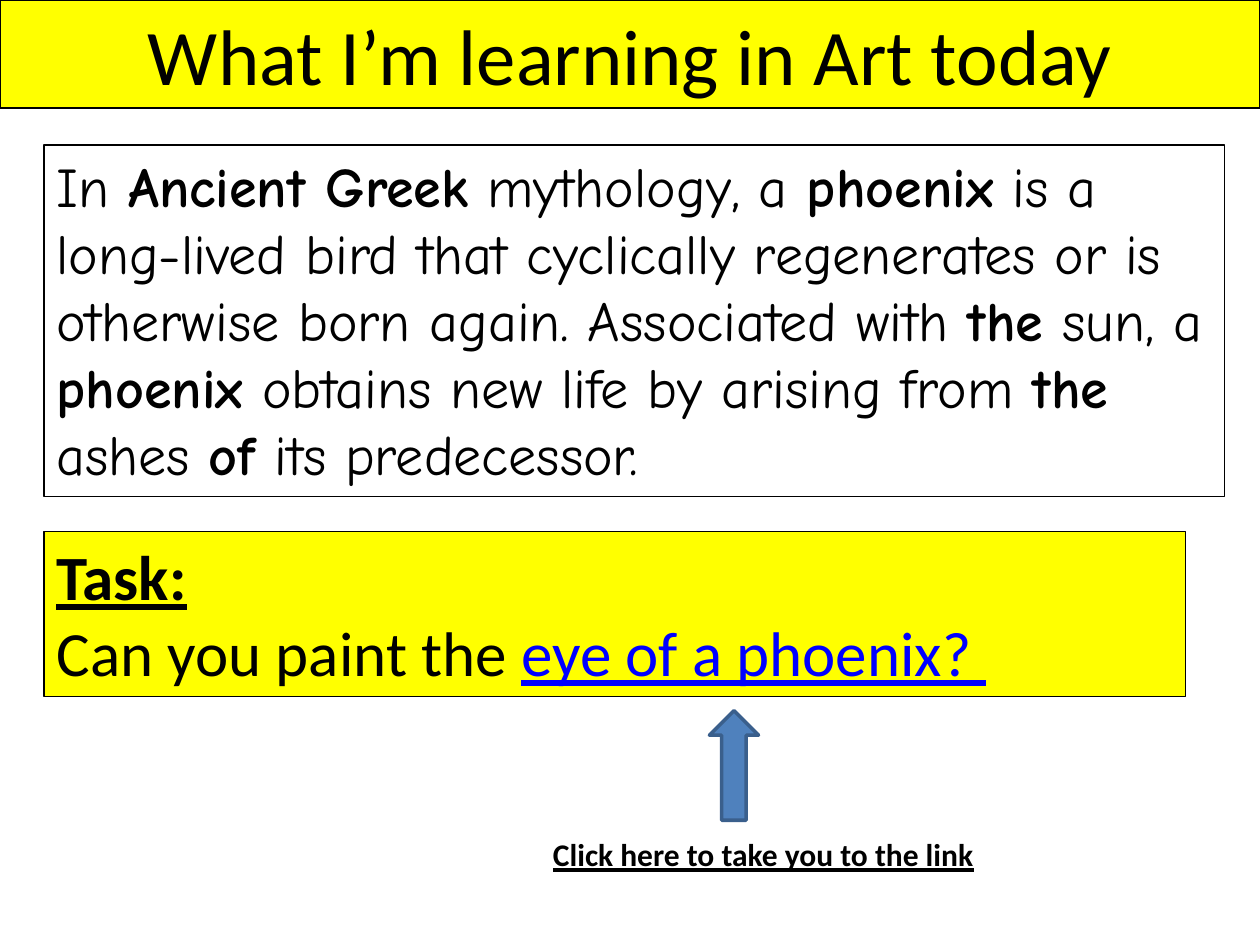
from pptx import Presentation
from pptx.dml.color import RGBColor
from pptx.enum.shapes import MSO_SHAPE
from pptx.enum.text import MSO_ANCHOR, MSO_AUTO_SIZE, PP_ALIGN
from pptx.util import Inches, Pt

BLACK = RGBColor(0x00, 0x00, 0x00)
YELLOW = RGBColor(0xFF, 0xFF, 0x00)
LINK_BLUE = RGBColor(0x00, 0x00, 0xFF)
ARROW_FILL = RGBColor(0x4F, 0x81, 0xBD)
ARROW_LINE = RGBColor(0x3A, 0x5F, 0x8C)

# Content: paragraphs of (text, format) runs
BOLD = {"bold": True}
HEADING = {"bold": True, "underline": True}
LINK = {"color": LINK_BLUE, "underline": True}

TITLE = [[("What I’m learning in Art today", {})]]
MYTH = [[
    ("In ", {}), ("Ancient Greek", BOLD), (" mythology, a ", {}),
    ("phoenix", BOLD),
    (" is a long-lived bird that cyclically regenerates or is otherwise "
     "born again. Associated with ", {}),
    ("the", BOLD), (" sun, a ", {}), ("phoenix", BOLD),
    (" obtains new life by arising from ", {}), ("the", BOLD),
    (" ashes ", {}), ("of", BOLD), (" its predecessor.", {}),
]]
TASK = [
    [("Task:", HEADING)],
    [("Can you paint the ", {}), ("eye of a phoenix? ", LINK)],
]
HINT = [[("Click here to take you to the link", HEADING)]]


def write(sp, paragraphs, size, font="Calibri", align=PP_ALIGN.LEFT):
    tf = sp.text_frame
    tf.word_wrap = True
    tf.auto_size = MSO_AUTO_SIZE.NONE
    tf.vertical_anchor = MSO_ANCHOR.TOP
    for i, runs in enumerate(paragraphs):
        p = tf.paragraphs[0] if i == 0 else tf.add_paragraph()
        p.alignment = align
        for text, fmt in runs:
            r = p.add_run()
            r.text = text
            r.font.name = font
            r.font.size = Pt(size)
            r.font.bold = fmt.get("bold", False)
            r.font.underline = fmt.get("underline", False)
            r.font.color.rgb = fmt.get("color", BLACK)


def place(sp, box):
    sp.left, sp.top, sp.width, sp.height = map(Inches, box)


def paint(sp, fill=None, line=BLACK, weight=1):
    if fill is None:
        sp.fill.background()
    else:
        sp.fill.solid()
        sp.fill.fore_color.rgb = fill
    sp.line.color.rgb = line
    sp.line.width = Pt(weight)


prs = Presentation()
prs.slide_width, prs.slide_height = Inches(10), Inches(7.5)
s = prs.slides.add_slide(prs.slide_layouts[5])

# Title banner
title = s.shapes.title
place(title, (0, 0, 10, 0.86))
paint(title, YELLOW)
write(title, TITLE, 45, align=PP_ALIGN.CENTER)

# Framed text panels
panels = [
    (MYTH, (0.35, 1.15, 9.37, 2.79), None, 1, 32, "Comic Neue"),
    (TASK, (0.35, 4.22, 9.06, 1.31), YELLOW, 0.75, 36, "Calibri"),
]
for paragraphs, box, fill, weight, size, font in panels:
    sp = s.shapes.add_textbox(*map(Inches, box))
    paint(sp, fill, weight=weight)
    write(sp, paragraphs, size, font)

# Arrow up to the link, with its hint below
arrow = s.shapes.add_shape(MSO_SHAPE.UP_ARROW,
                           *map(Inches, (5.63, 5.64, 0.39, 0.87)))
arrow.shadow.inherit = False
paint(arrow, ARROW_FILL, ARROW_LINE, 2)
hint = s.shapes.add_textbox(*map(Inches, (4.29, 6.58, 3.7, 0.4)))
write(hint, HINT, 18)

prs.save("out.pptx")
